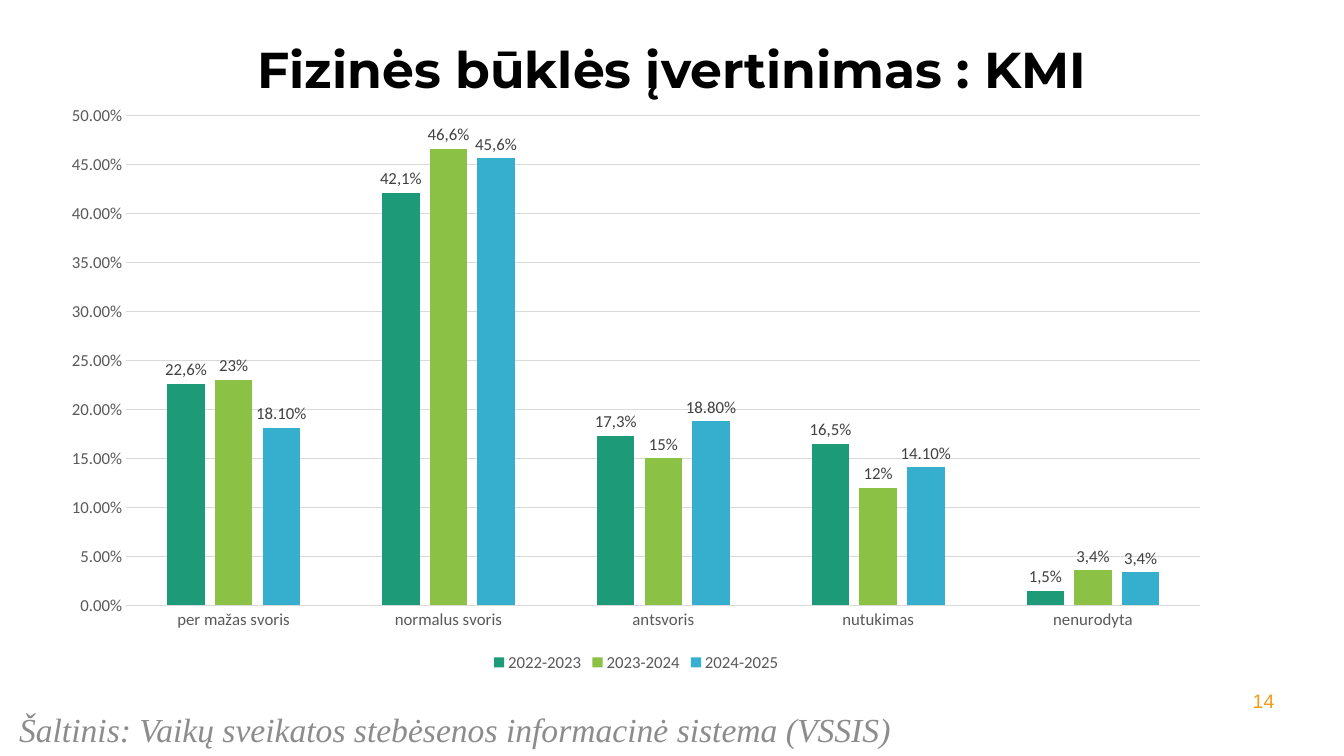
from pptx import Presentation
from pptx.chart.data import CategoryChartData
from pptx.dml.color import RGBColor
from pptx.enum.chart import XL_CHART_TYPE, XL_LABEL_POSITION, XL_LEGEND_POSITION, XL_TICK_MARK
from pptx.enum.text import MSO_ANCHOR, PP_ALIGN
from pptx.util import Inches, Pt

COLUMNS = XL_CHART_TYPE.COLUMN_CLUSTERED
ABOVE = XL_LABEL_POSITION.OUTSIDE_END
BOTTOM = XL_LEGEND_POSITION.BOTTOM
NO_TICK = XL_TICK_MARK.NONE
TOP, MIDDLE = MSO_ANCHOR.TOP, MSO_ANCHOR.MIDDLE
LEFT, CENTER, RIGHT = PP_ALIGN.LEFT, PP_ALIGN.CENTER, PP_ALIGN.RIGHT

COLORS = {
    "title": "000000", "source": "8C8C8C", "page": "F19D19",
    "axis": "595959", "label": "404040", "grid": "D9D9D9",
    "green": "1D9A78", "lime": "8BC145", "blue": "36AFCE",
}
PERCENT = "0.00%"
GROUPS = ["per mažas svoris", "normalus svoris", "antsvoris", "nutukimas", "nenurodyta"]
YEARS = [
    ("2022-2023", "green", [0.226, 0.421, 0.173, 0.165, 0.015],
     ["22,6%", "42,1%", "17,3%", "16,5%", "1,5%"]),
    ("2023-2024", "lime", [0.23, 0.466, 0.15, 0.12, 0.036],
     ["23%", "46,6%", "15%", "12%", "3,4%"]),
    ("2024-2025", "blue", [0.181, 0.456, 0.188, 0.141, 0.034],
     [None, "45,6%", None, None, "3,4%"]),
]


class Deck:
    def __init__(self):
        self.file = Presentation()
        self.file.slide_width = Inches(13.33)
        self.file.slide_height = Inches(7.5)
        self.slide = self.file.slides.add_slide(self.file.slide_layouts[6])

    def place(self, left, top, width, height):
        col = self.file.slide_width / 100
        row = self.file.slide_height / 100
        return [round(n) for n in (left * col, top * row, width * col, height * row)]

    def style(self, font, size, color, face="Calibri", bold=False, italic=False):
        font.name, font.size = face, Pt(size)
        font.bold, font.italic = bold, italic
        font.color.rgb = RGBColor.from_string(COLORS[color])

    def text(self, area, words, size, color, face, align=LEFT, anchor=TOP,
             space=1.0, bold=False, italic=False):
        frame = self.slide.shapes.add_textbox(*self.place(*area)).text_frame
        frame.word_wrap = True
        frame.vertical_anchor = anchor
        para = frame.paragraphs[0]
        para.alignment, para.line_spacing = align, space
        run = para.add_run()
        run.text = words
        self.style(run.font, size, color, face, bold, italic)

    def rule(self, line):
        line.color.rgb = RGBColor.from_string(COLORS["grid"])
        line.width = Pt(0.75)

    def labels(self, series, words):
        marks = series.data_labels
        marks.show_value = True
        marks.position = ABOVE
        marks.number_format, marks.number_format_is_linked = PERCENT, False
        self.style(marks.font, 12, "label")
        for spot, word in enumerate(words):
            if word:
                mark = series.points[spot].data_label
                run = mark.text_frame.paragraphs[0].add_run()
                run.text = word
                self.style(run.font, 12, "label")
                mark.position = ABOVE

    def axes(self, chart):
        for axis in (chart.category_axis, chart.value_axis):
            axis.major_tick_mark = axis.minor_tick_mark = NO_TICK
            self.style(axis.tick_labels.font, 12, "axis")
        self.rule(chart.category_axis.format.line)
        value = chart.value_axis
        value.minimum_scale, value.maximum_scale, value.major_unit = 0, 0.5, 0.05
        value.format.line.fill.background()
        value.has_major_gridlines = True
        self.rule(value.major_gridlines.format.line)
        ticks = value.tick_labels
        ticks.number_format, ticks.number_format_is_linked = PERCENT, False

    def chart(self, area):
        data = CategoryChartData(number_format=PERCENT)
        data.categories = GROUPS
        for name, _, values, _ in YEARS:
            data.add_series(name, values)
        chart = self.slide.shapes.add_chart(COLUMNS, *self.place(*area), data).chart
        self.style(chart.font, 10, "title")
        chart.has_title = False
        chart.has_legend = True
        chart.legend.position = BOTTOM
        chart.legend.include_in_layout = False
        self.style(chart.legend.font, 12, "axis")
        self.axes(chart)
        plot = chart.plots[0]
        plot.gap_width, plot.overlap = 219, -27
        plot.vary_by_categories = False
        for series, (_, color, _, words) in zip(plot.series, YEARS):
            series.format.fill.solid()
            series.format.fill.fore_color.rgb = RGBColor.from_string(COLORS[color])
            self.labels(series, words)


def main():
    deck = Deck()
    deck.text((0.68, 93.07, 67.29, 5.07),
              "Šaltinis: Vaikų sveikatos stebėsenos informacinė sistema (VSSIS)",
              24, "source", "Times New Roman", italic=True)
    deck.text((91.67, 90.53, 3.9, 5.33), "14", 14, "page", "Arial", RIGHT)
    deck.text((0, 0, 100, 19.2), "Fizinės būklės įvertinimas : KMI",
              36, "title", "Montserrat", CENTER, MIDDLE, 0.9, bold=True)
    deck.chart((3.6, 12.4, 87.47, 77.07))
    deck.file.save("out.pptx")


if __name__ == "__main__":
    main()
